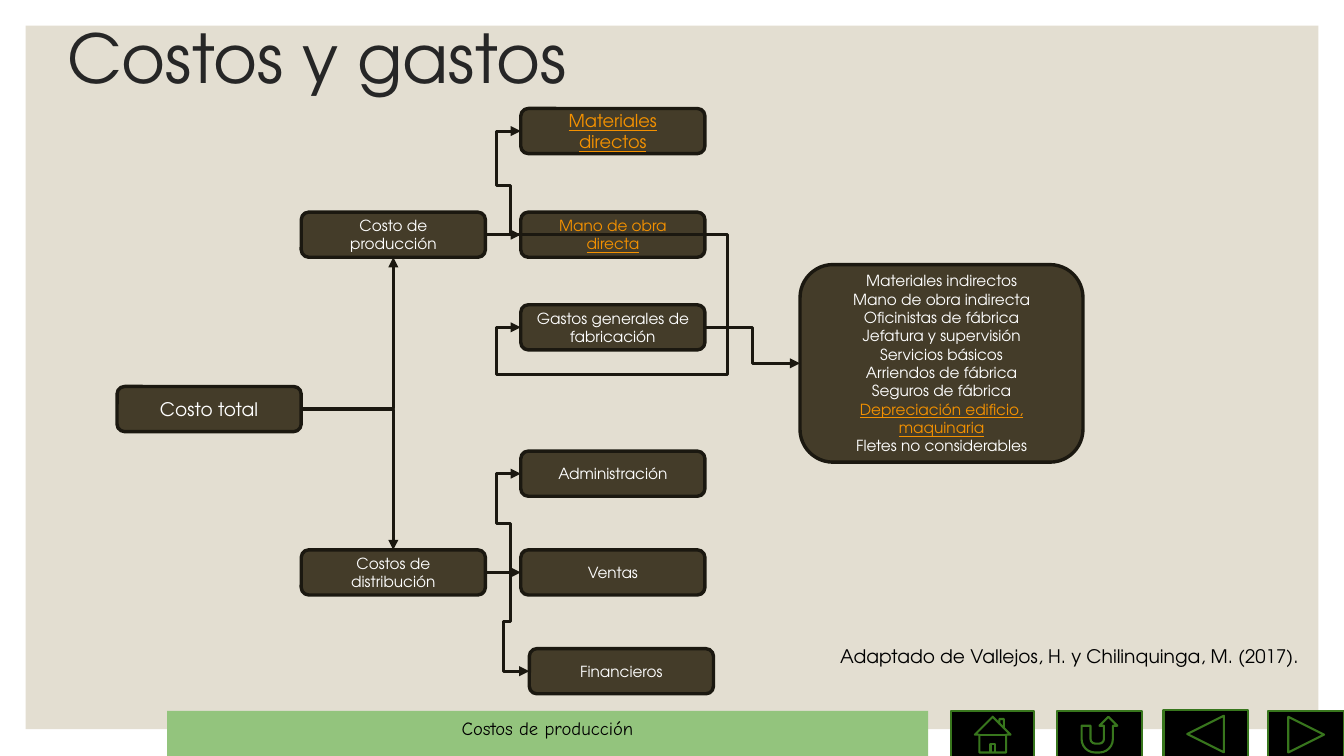
"""Build the slide on costs and expenses: a cost tree with a navigation bar."""
from dataclasses import dataclass

from lxml.etree import SubElement
from pptx import Presentation
from pptx.dml.color import RGBColor as RGB
from pptx.enum.shapes import MSO_CONNECTOR as Wire, MSO_SHAPE as Form
from pptx.enum.text import MSO_ANCHOR as Anchor, PP_ALIGN as Align
from pptx.oxml.ns import qn
from pptx.util import Inches, Pt


@dataclass(frozen=True)
class Theme:
    panel: RGB = RGB(0xE3, 0xDE, 0xD1)
    box: RGB = RGB(0x44, 0x3C, 0x29)
    edge: RGB = RGB(0x1B, 0x18, 0x10)
    white: RGB = RGB(0xFF, 0xFF, 0xFF)
    black: RGB = RGB(0, 0, 0)
    title: RGB = RGB(0x26, 0x26, 0x26)
    accent: RGB = RGB(0xF4, 0x91, 0x00)
    bar: RGB = RGB(0x93, 0xC4, 0x7D)
    icon: RGB = RGB(0x38, 0x76, 0x1D)
    face: str = "TeX Gyre Adventor"
    hand: str = "Comic Neue"
    head: float = 39.7
    large: float = 11
    mid: float = 10.5
    small: float = 9


THEME = Theme()
WIDE, HIGH = 1.51, 0.37
ROOT, STEM, LEAF = 0.96, 2.47, 4.27
NODES = {
    "Costo total": (ROOT, 3.17),
    "Costos de distribución": (STEM, 4.51),
    "Costo de producción": (STEM, 1.74),
    "Materiales directos": (LEAF, 0.89),
    "Mano de obra directa": (LEAF, 1.74),
    "Gastos generales de fabricación": (LEAF, 2.5),
    "Administración": (LEAF, 3.7),
    "Ventas": (LEAF, 4.51),
    "Financieros": (4.34, 5.32),
}
SIZES = {"Costo total": THEME.large, "Materiales directos": THEME.mid}
DETAIL = "Depreciación edificio, maquinaria"
MARKED = {"Materiales directos", "Mano de obra directa", DETAIL}
ITEMS = [
    "Materiales indirectos", "Mano de obra indirecta", "Oficinistas de fábrica",
    "Jefatura y supervisión", "Servicios básicos", "Arriendos de fábrica",
    "Seguros de fábrica", DETAIL, "Fletes no considerables",
]
TOP, LEFT, BOTTOM, RIGHT = range(4)
LINKS = [
    ("Costo de producción", "Materiales directos", LEFT, (0.697, 0.479, 0.303)),
    ("Costo de producción", "Mano de obra directa", LEFT, ()),
    ("Costo de producción", "Gastos generales de fabricación", LEFT, (6.851, 1.512, 0.303)),
    ("Costo total", "Costo de producción", BOTTOM, ()),
    ("Costo total", "Costos de distribución", TOP, ()),
    ("Gastos generales de fabricación", "Detalle", LEFT, (0.5,)),
    ("Costos de distribución", "Administración", LEFT, (0.697, 0.5, 0.303)),
    ("Costos de distribución", "Ventas", LEFT, ()),
    ("Costos de distribución", "Financieros", LEFT, (0.577, 0.5, 0.423)),
]
BUTTONS = [
    (Form.ACTION_BUTTON_BACK_OR_PREVIOUS, 9.54, 5.82, 0.69, 0.4),
    (Form.ACTION_BUTTON_FORWARD_OR_NEXT, 10.4, 5.83, 0.62, 0.39),
    (Form.ACTION_BUTTON_HOME, 7.8, 5.83, 0.68, 0.39),
    (Form.ACTION_BUTTON_RETURN, 8.67, 5.83, 0.69, 0.39),
]


def add_form(slide, form, area, fill, line=None, width=2):
    """Add a filled preset shape, outlined when a line colour is given."""
    shape = slide.shapes.add_shape(form, *map(Inches, area))
    shape.shadow.inherit = False
    shape.fill.solid()
    shape.fill.fore_color.rgb = fill
    if line is None:
        shape.line.fill.background()
    else:
        shape.line.color.rgb = line
        shape.line.width = Pt(width)
    return shape


def style(para, size, color, face=THEME.face, align=Align.CENTER):
    """Set the font and alignment of a paragraph."""
    para.alignment = align
    para.font.size = Pt(size)
    para.font.name = face
    para.font.color.rgb = color


def add_node(slide, area, lines, size=THEME.small):
    """Add a dark rounded box with one paragraph per line."""
    node = add_form(slide, Form.ROUNDED_RECTANGLE, area, THEME.box, THEME.edge)
    frame = node.text_frame
    frame.text = "\n".join(lines)
    frame.vertical_anchor = Anchor.MIDDLE
    for para, line in zip(frame.paragraphs, lines):
        style(para, size, THEME.accent if line in MARKED else THEME.white)
        para.font.underline = line in MARKED
    return node


def add_link(slide, start, end, side, bends):
    """Join the right side of one box to a side of another with an arrow."""
    flat = side == LEFT and not bends
    link = slide.shapes.add_connector(Wire.STRAIGHT if flat else Wire.ELBOW, 0, 0, 0, 0)
    link.begin_connect(start, RIGHT)
    link.end_connect(end, side)
    link.line.color.rgb = THEME.edge
    link.line.width = Pt(1.75)
    SubElement(link.line._get_or_add_ln(), qn("a:tailEnd"), type="triangle")
    props = link._element.spPr
    SubElement(props, qn("a:effectLst"))
    if not flat:
        geom = props.find(qn("a:prstGeom"))
        geom.set("prst", f"bentConnector{len(bends) + 2}")
        guides = geom.find(qn("a:avLst"))
        for index, bend in enumerate(bends, 1):
            SubElement(guides, qn("a:gd"), name=f"adj{index}", fmla=f"val {round(bend * 100000)}")


def add_label(slide, area, text, size, color, wrap=True, inset=True):
    """Add a left-aligned line of text."""
    frame = slide.shapes.add_textbox(*map(Inches, area)).text_frame
    frame.word_wrap = wrap
    if not inset:
        frame.margin_left = frame.margin_right = frame.margin_top = frame.margin_bottom = 0
        frame.vertical_anchor = Anchor.MIDDLE
    para = frame.paragraphs[0]
    para.text = text
    style(para, size, color, align=Align.LEFT)
    return para


def add_bar(slide):
    """Add the footer bar and its navigation buttons."""
    for form, *area in BUTTONS:
        add_form(slide, form, area, THEME.black, THEME.icon, 1.25)
    bar = add_form(slide, Form.RECTANGLE, (1.37, 5.83, 6.24, 0.39), THEME.bar)
    bar.text_frame.vertical_anchor = Anchor.TOP
    para = bar.text_frame.paragraphs[0]
    para.text = "Costos de producción"
    style(para, THEME.large, THEME.black, THEME.hand)


def main():
    """Build and save the slide."""
    deck = Presentation()
    deck.slide_width, deck.slide_height = Inches(11.02), Inches(6.2)
    slide = deck.slides.add_slide(deck.slide_layouts[6])
    add_form(slide, Form.RECTANGLE, (0.21, 0.21, 10.6, 5.77), THEME.panel)
    title = add_label(slide, (0.55, 0.25, 9.92, 0.52), "Costos y gastos",
                      THEME.head, THEME.title, inset=False)
    title.line_spacing = 0.9
    nodes = {
        name: add_node(slide, (*spot, WIDE, HIGH), [name], SIZES.get(name, THEME.small))
        for name, spot in NODES.items()
    }
    nodes["Detalle"] = add_node(slide, (6.56, 2.17, 2.32, 1.62), ITEMS)
    for start, end, side, bends in LINKS:
        add_link(slide, nodes[start], nodes[end], side, bends)
    add_bar(slide)
    add_label(slide, (6.79, 5.24, 4.18, 0.28),
              "Adaptado de Vallejos, H. y Chilinquinga, M. (2017).",
              THEME.large, THEME.black, wrap=False)
    deck.save("out.pptx")


if __name__ == "__main__":
    main()
